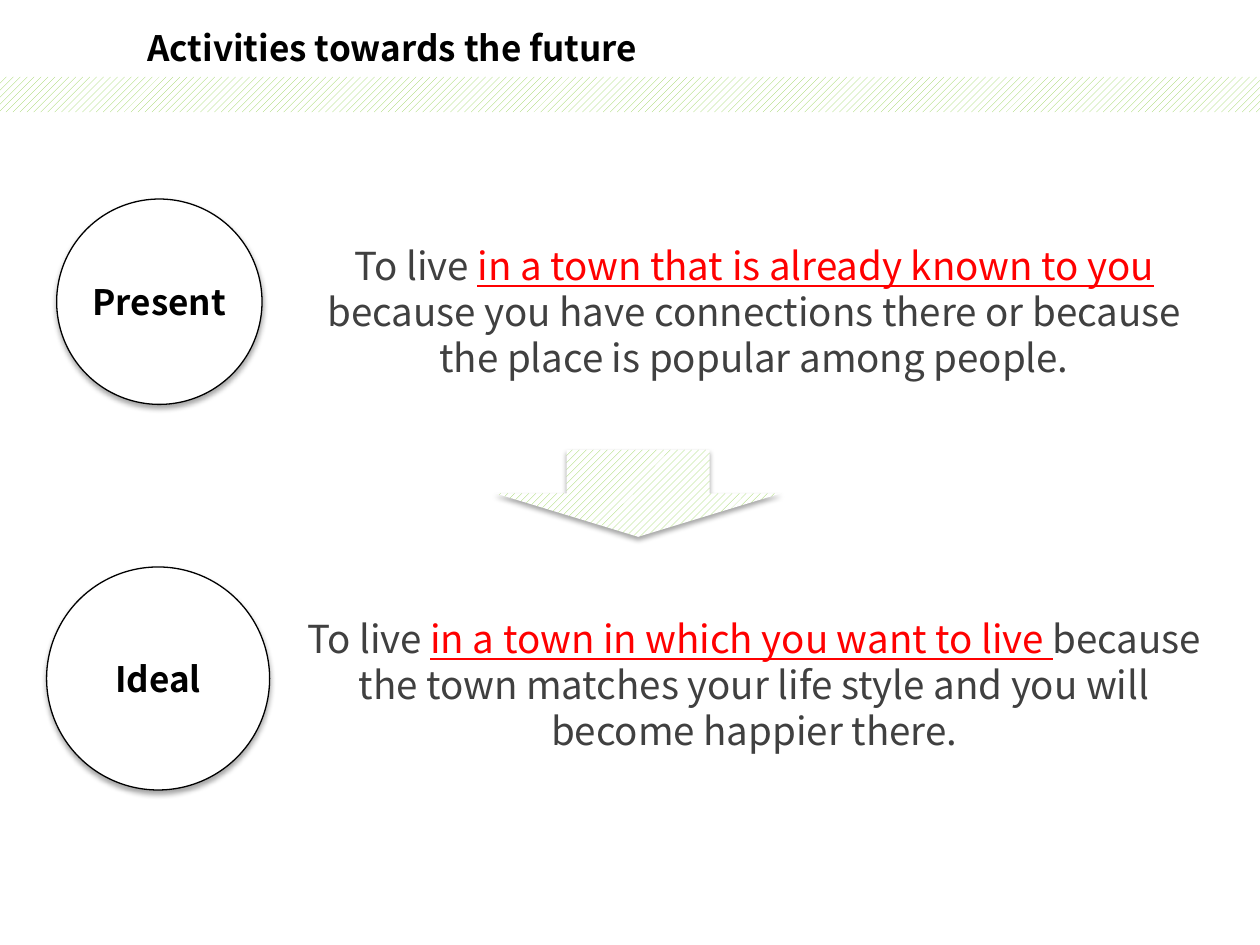
from lxml import etree
from pptx import Presentation
from pptx.dml.color import RGBColor
from pptx.enum import dml, shapes, text
from pptx.oxml.ns import qn
from pptx.util import Inches, Pt

TITLE = "Activities towards the future"
STAGES = [
    {
        "label": "Present", "circle": (0.45, 1.58, 1.63), "text_top": 1.83,
        "runs": ["To live ", "in a town that is already known to you ",
                 "because you have connections there or because the place is popular among people."],
    },
    {
        "label": "Ideal", "circle": (0.37, 4.5, 1.77), "text_top": 4.79,
        "runs": ["To live ", "in a town in which you want to live ",
                 "because the town matches your life style and you will become happier there."],
    },
]
BAND = (0, 0.61, 10, 0.28)
TITLE_BOX = (1.07, 0.16, 6.8, 0.44)
ARROW = (3.93, 3.57, 2.27, 0.69)
TEXT_LEFT, TEXT_WIDTH, TEXT_HEIGHT = 2.33, 7.31, 1.28

THEME = {
    "font": "Noto Sans CJK JP",
    "heading_size": 20, "body_size": 22,
    "black": "000000", "white": "FFFFFF", "green": "92D050",
    "body": "404040", "accent": "FF0000",
}


def rgb(name):
    return RGBColor.from_string(THEME[name])


def add_shape(s, kind, box, hatched=False):
    sp = s.shapes.add_shape(kind, *map(Inches, box))
    sp.shadow.inherit = False
    sp.line.fill.background()
    if hatched:
        sp.fill.patterned()
        sp.fill.pattern = dml.MSO_PATTERN.WIDE_UPWARD_DIAGONAL
        sp.fill.fore_color.rgb = rgb("green")
        sp.fill.back_color.rgb = rgb("white")
    else:
        sp.fill.solid()
        sp.fill.fore_color.rgb = rgb("white")
    return sp


def add_shadow(sp):
    effects = sp._element.spPr.find(qn("a:effectLst"))
    shadow = etree.SubElement(effects, qn("a:outerShdw"), blurRad=str(Pt(3.1)),
                              dist=str(Pt(1.8)), dir="5400000", rotWithShape="0")
    color = etree.SubElement(shadow, qn("a:srgbClr"), val=THEME["black"])
    etree.SubElement(color, qn("a:alpha"), val="35000")


def style(r, size, color, bold=False, underline=False):
    r.font.name = THEME["font"]
    r.font.size = Pt(THEME[size])
    r.font.color.rgb = rgb(color)
    r.font.bold = bold
    r.font.underline = underline


def set_heading(sp, words, align, anchor):
    tf = sp.text_frame
    tf.text = words
    tf.word_wrap = True
    tf.vertical_anchor = anchor
    p = tf.paragraphs[0]
    p.alignment = align
    style(p.runs[0], "heading_size", "black", bold=True)
    return tf


def add_circle(s, stage):
    left, top, size = stage["circle"]
    sp = add_shape(s, shapes.MSO_SHAPE.OVAL, (left, top, size, size))
    sp.line.color.rgb = rgb("black")
    sp.line.width = Pt(0.75)
    add_shadow(sp)
    tf = set_heading(sp, stage["label"], text.PP_ALIGN.CENTER, text.MSO_ANCHOR.MIDDLE)
    tf.margin_left = tf.margin_right = tf.margin_top = tf.margin_bottom = 0


def add_statement(s, stage):
    box = (TEXT_LEFT, stage["text_top"], TEXT_WIDTH, TEXT_HEIGHT)
    tf = s.shapes.add_textbox(*map(Inches, box)).text_frame
    tf.word_wrap = True
    tf.vertical_anchor = text.MSO_ANCHOR.MIDDLE
    p = tf.paragraphs[0]
    p.alignment = text.PP_ALIGN.CENTER
    for i, words in enumerate(stage["runs"]):
        r = p.add_run()
        r.text = words
        key = i == 1
        style(r, "body_size", "accent" if key else "body", underline=key)


def main():
    prs = Presentation()
    prs.slide_width, prs.slide_height = Inches(10), Inches(7.5)
    s = prs.slides.add_slide(prs.slide_layouts[6])

    add_shape(s, shapes.MSO_SHAPE.RECTANGLE, BAND, hatched=True)
    title = add_shape(s, shapes.MSO_SHAPE.RECTANGLE, TITLE_BOX)
    tf = set_heading(title, TITLE, text.PP_ALIGN.LEFT, text.MSO_ANCHOR.TOP)
    tf.auto_size = text.MSO_AUTO_SIZE.SHAPE_TO_FIT_TEXT

    for stage in STAGES:
        add_statement(s, stage)
        add_circle(s, stage)
    add_shadow(add_shape(s, shapes.MSO_SHAPE.DOWN_ARROW, ARROW, hatched=True))

    prs.save("out.pptx")


if __name__ == "__main__":
    main()
